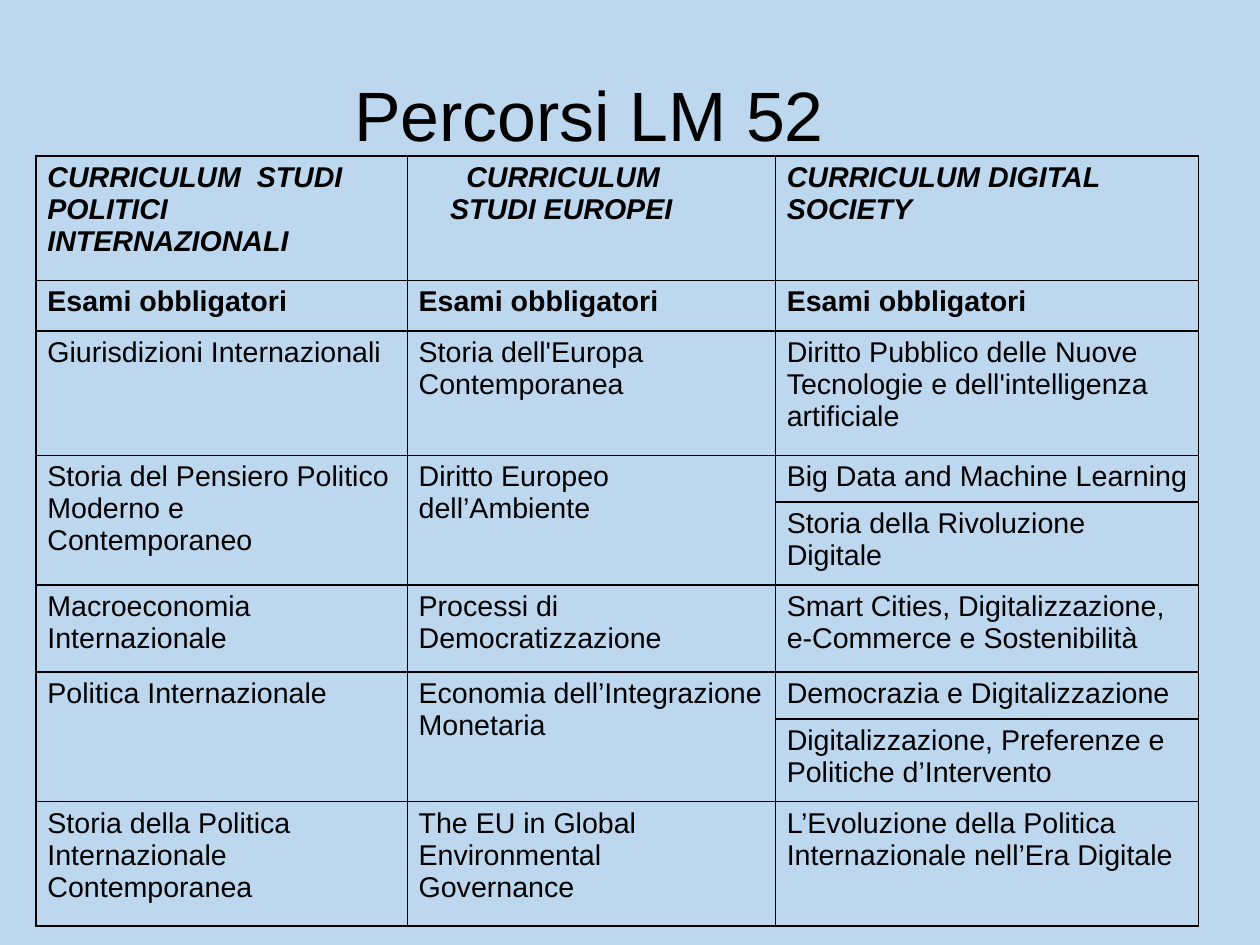
import pptx
import pptx.dml.color
import pptx.enum.text
import pptx.oxml
import pptx.oxml.ns
import pptx.util
from dataclasses import dataclass

Cm = pptx.util.Cm
Pt = pptx.util.Pt
RGBColor = pptx.dml.color.RGBColor
ALIGN = pptx.enum.text.PP_ALIGN
ANCHOR = pptx.enum.text.MSO_ANCHOR

SKY = RGBColor(0xBD, 0xD7, 0xEE)
BLACK = RGBColor(0, 0, 0)
FONT = "Arial"


@dataclass
class Entry:
    text: str
    span: int = 1
    indents: tuple[float, ...] = ()


# Table content, one list per column
COLUMNS = [
    [
        Entry("CURRICULUM  STUDI POLITICI INTERNAZIONALI"),
        Entry("Esami obbligatori"),
        Entry("Giurisdizioni Internazionali"),
        Entry("Storia del Pensiero Politico Moderno e Contemporaneo", span=2),
        Entry("Macroeconomia Internazionale"),
        Entry("Politica Internazionale", span=2),
        Entry("Storia della Politica Internazionale Contemporanea"),
    ],
    [
        Entry("CURRICULUM\nSTUDI EUROPEI", indents=(1.06, 0.7)),
        Entry("Esami obbligatori"),
        Entry("Storia dell'Europa Contemporanea"),
        Entry("Diritto Europeo dell’Ambiente", span=2),
        Entry("Processi di Democratizzazione"),
        Entry("Economia dell’Integrazione Monetaria", span=2),
        Entry("The EU in Global Environmental Governance"),
    ],
    [
        Entry("CURRICULUM DIGITAL SOCIETY"),
        Entry("Esami obbligatori"),
        Entry("Diritto Pubblico delle Nuove Tecnologie e dell'intelligenza artificiale"),
        Entry("Big Data and Machine Learning"),
        Entry("Storia della Rivoluzione Digitale"),
        Entry("Smart Cities, Digitalizzazione, e-Commerce e Sostenibilità"),
        Entry("Democrazia e Digitalizzazione"),
        Entry("Digitalizzazione, Preferenze e Politiche d’Intervento"),
        Entry("L’Evoluzione della Politica Internazionale nell’Era Digitale"),
    ],
]
WIDTHS = [8.25, 8.18, 9.41]
HEIGHTS = [2.76, 1.13, 2.76, 1.04, 1.84, 1.94, 1.04, 1.84, 2.76]


def write(frame, text: str, *, size: float = 18, bold: bool = False,
          italic: bool = False, align=ALIGN.LEFT,
          indents: tuple[float, ...] = ()) -> None:
    """Fill a text frame, one paragraph per line."""
    frame.word_wrap = True
    for i, line in enumerate(text.split("\n")):
        para = frame.paragraphs[0] if i == 0 else frame.add_paragraph()
        para.alignment = align
        if indents:
            para._p.get_or_add_pPr().set("marL", str(Cm(indents[i])))
        run = para.add_run()
        run.text = line
        font = run.font
        font.name, font.size = FONT, Pt(size)
        font.bold, font.italic = bold, italic
        font.color.rgb = BLACK


def frame_cell(cell) -> None:
    """Give a cell black borders and no fill."""
    props = cell._tc.get_or_add_tcPr()
    for side in "LRTB":
        props.append(pptx.oxml.parse_xml(
            f'<a:ln{side} {pptx.oxml.ns.nsdecls("a")} w="{Pt(1)}">'
            f'<a:solidFill><a:srgbClr val="{BLACK}"/></a:solidFill></a:ln{side}>'))
    cell.fill.background()


def add_grid(slide) -> None:
    shape = slide.shapes.add_table(
        len(HEIGHTS), len(WIDTHS), Cm(0.8), Cm(3.47),
        Cm(sum(WIDTHS)), Cm(sum(HEIGHTS)))
    table = shape.table
    table.first_row = table.horz_banding = False
    for col, width in zip(table.columns, WIDTHS):
        col.width = Cm(width)
    for row, height in zip(table.rows, HEIGHTS):
        row.height = Cm(height)
    for cell in table.iter_cells():
        frame_cell(cell)

    for c, entries in enumerate(COLUMNS):
        r = 0
        for entry in entries:
            cell = table.cell(r, c)
            if entry.span > 1:
                cell.merge(table.cell(r + entry.span - 1, c))
            write(cell.text_frame, entry.text, bold=r < 2, italic=r == 0,
                  indents=entry.indents)
            r += entry.span


def add_title(slide) -> None:
    box = slide.shapes.add_textbox(Cm(5.6), Cm(0.8), Cm(15), Cm(3.47))
    frame = box.text_frame
    frame.margin_left = frame.margin_right = 0
    frame.margin_top = frame.margin_bottom = 0
    frame.vertical_anchor = ANCHOR.MIDDLE
    write(frame, "Percorsi LM 52", size=44, align=ALIGN.CENTER)


def main() -> None:
    deck = pptx.Presentation()
    deck.slide_width, deck.slide_height = Cm(28), Cm(21)
    slide = deck.slides.add_slide(deck.slide_layouts[6])
    # Background
    fill = slide.background.fill
    fill.solid()
    fill.fore_color.rgb = SKY
    # Content
    add_grid(slide)
    add_title(slide)
    deck.save("out.pptx")


if __name__ == "__main__":
    main()
